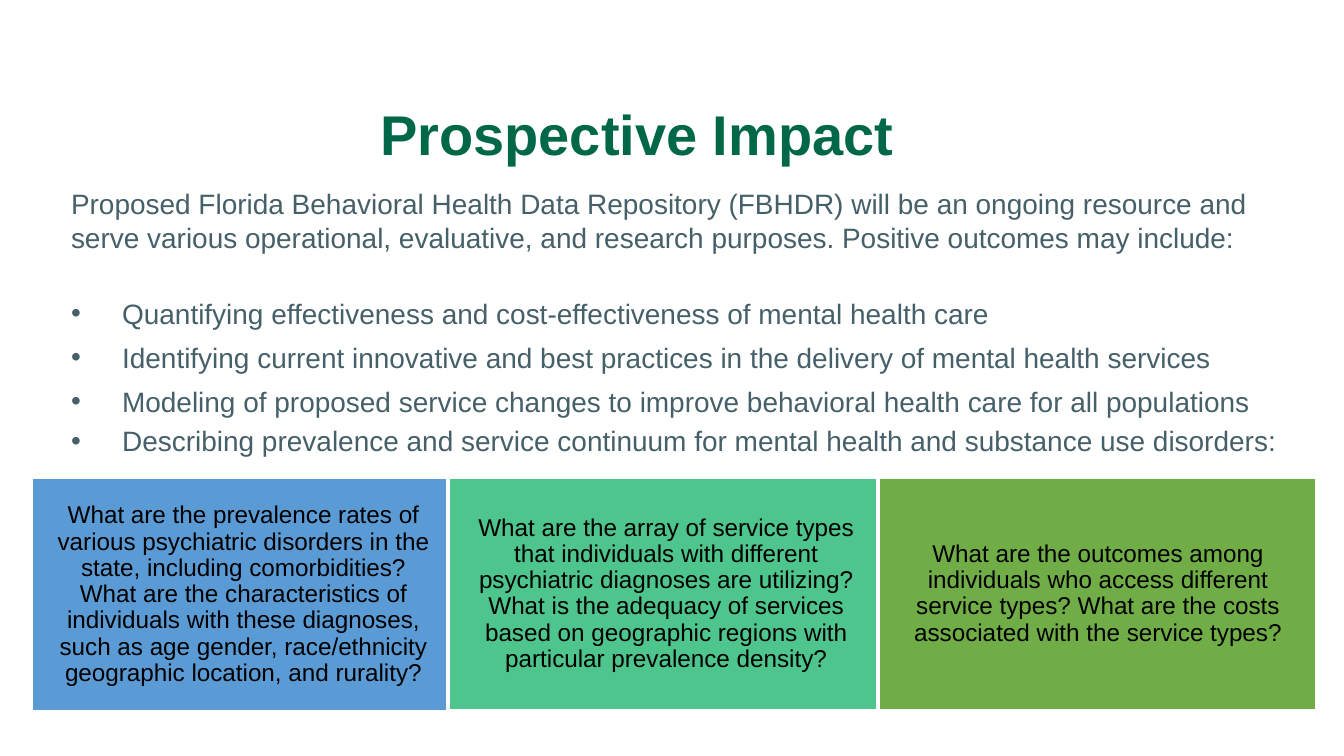
import dataclasses

import pptx
import pptx.dml.color
import pptx.enum.shapes
import pptx.enum.text
import pptx.oxml.ns
import pptx.util
from lxml import etree

ALIGN = pptx.enum.text.PP_ALIGN
ANCHOR = pptx.enum.text.MSO_ANCHOR

# The slide is a grid of 100 columns by 56.25 rows
COLS, ROWS = 100, 56.25
CELL = 0.1


@dataclasses.dataclass(frozen=True)
class Theme:
    font: str = "Arial"
    title: str = "006747"
    body: str = "466069"
    box_text: str = "000000"
    box_line: str = "FFFFFF"
    title_size: int = 30
    body_size: int = 15
    box_size: int = 13


THEME = Theme()

INTRO = ("Proposed Florida Behavioral Health Data Repository (FBHDR) will be an "
         "ongoing resource and serve various operational, evaluative, and research "
         "purposes. Positive outcomes may include:")

# Bullet text and the space before it in points
BULLETS = [
    ("Quantifying effectiveness and cost-effectiveness of mental health care", 22.8),
    ("Identifying current innovative and best practices in the delivery of "
     "mental health services", 5.6),
    ("Modeling of proposed service changes to improve behavioral health care "
     "for all populations", 5.6),
    ("Describing prevalence and service continuum for mental health and "
     "substance use disorders:", 3),
]

# Question boxes: left column, width, height, fill, text
QUESTIONS = [
    (2.3, 31.6, 17.5, "5B9BD5",
     "What are the prevalence rates of various psychiatric disorders in the state, "
     "including comorbidities? What are the characteristics of individuals with "
     "these diagnoses, such as age gender, race/ethnicity geographic location, "
     "and rurality?"),
    (33.35, 32.4, 17.4, "4DC58D",
     "What are the array of service types that individuals with different "
     "psychiatric diagnoses are utilizing? What is the adequacy of services based "
     "on geographic regions with particular prevalence density?"),
    (65.35, 32.65, 17.4, "70AD47",
     "What are the outcomes among individuals who access different service types? "
     "What are the costs associated with the service types?"),
]
QUESTION_ROW = 35.5


def cells(n):
    return pptx.util.Inches(n * CELL)


def rgb(value):
    return pptx.dml.color.RGBColor.from_string(value)


def write(p, text, *, size, color, bold=False, align=ALIGN.LEFT, spacing=1.0, before=0):
    """Put formatted text into a paragraph."""
    p.alignment = align
    p.line_spacing = spacing
    p.space_before = pptx.util.Pt(before)
    r = p.add_run()
    r.text = text
    r.font.name = THEME.font
    r.font.size = pptx.util.Pt(size)
    r.font.bold = bold
    r.font.color.rgb = rgb(color)


def set_frame(tf, anchor, side=0.1, top=0.05):
    tf.word_wrap = True
    tf.auto_size = pptx.enum.text.MSO_AUTO_SIZE.NONE
    tf.vertical_anchor = anchor
    tf.margin_left = tf.margin_right = pptx.util.Inches(side)
    tf.margin_top = tf.margin_bottom = pptx.util.Inches(top)


def add_bullet(p, indent=0.38):
    """Give a paragraph a round bullet with a hanging indent."""
    ppr = p._p.get_or_add_pPr()
    ppr.set("marL", str(pptx.util.Inches(indent)))
    ppr.set("indent", str(-pptx.util.Inches(indent)))
    qn = pptx.oxml.ns.qn
    color = etree.SubElement(ppr, qn("a:buClr"))
    etree.SubElement(color, qn("a:srgbClr"), val=THEME.body)
    etree.SubElement(ppr, qn("a:buFont"), typeface=THEME.font)
    etree.SubElement(ppr, qn("a:buChar"), char="•")


def set_title(s, text):
    sp = s.shapes.title
    sp.left, sp.top, sp.width, sp.height = map(cells, (4.3, 6.4, 86.2, 7.6))
    set_frame(sp.text_frame, ANCHOR.MIDDLE)
    write(sp.text_frame.paragraphs[0], text, size=THEME.title_size,
          color=THEME.title, bold=True, align=ALIGN.CENTER, spacing=0.9)


def add_body(s):
    sp = s.shapes.add_textbox(*map(cells, (4.3, 13.4, 92.8, 38.7)))
    tf = sp.text_frame
    set_frame(tf, ANCHOR.TOP)
    style = dict(size=THEME.body_size, color=THEME.body)
    write(tf.paragraphs[0], INTRO, **style)
    for text, before in BULLETS:
        p = tf.add_paragraph()
        add_bullet(p)
        write(p, text, before=before, **style)


def add_question(s, left, width, height, fill, text):
    sp = s.shapes.add_shape(pptx.enum.shapes.MSO_SHAPE.RECTANGLE,
                            *map(cells, (left, QUESTION_ROW, width, height)))
    sp.shadow.inherit = False
    sp.fill.solid()
    sp.fill.fore_color.rgb = rgb(fill)
    sp.line.color.rgb = rgb(THEME.box_line)
    sp.line.width = pptx.util.Pt(2)
    set_frame(sp.text_frame, ANCHOR.MIDDLE, side=0.14, top=0.15)
    write(sp.text_frame.paragraphs[0], text, size=THEME.box_size,
          color=THEME.box_text, align=ALIGN.CENTER, spacing=0.9)


def main():
    prs = pptx.Presentation()
    prs.slide_width, prs.slide_height = cells(COLS), cells(ROWS)
    s = prs.slides.add_slide(prs.slide_layouts[5])  # title only

    # Heading and text
    set_title(s, "Prospective Impact")
    add_body(s)

    # Row of questions
    for question in QUESTIONS:
        add_question(s, *question)

    prs.save("out.pptx")


if __name__ == "__main__":
    main()
